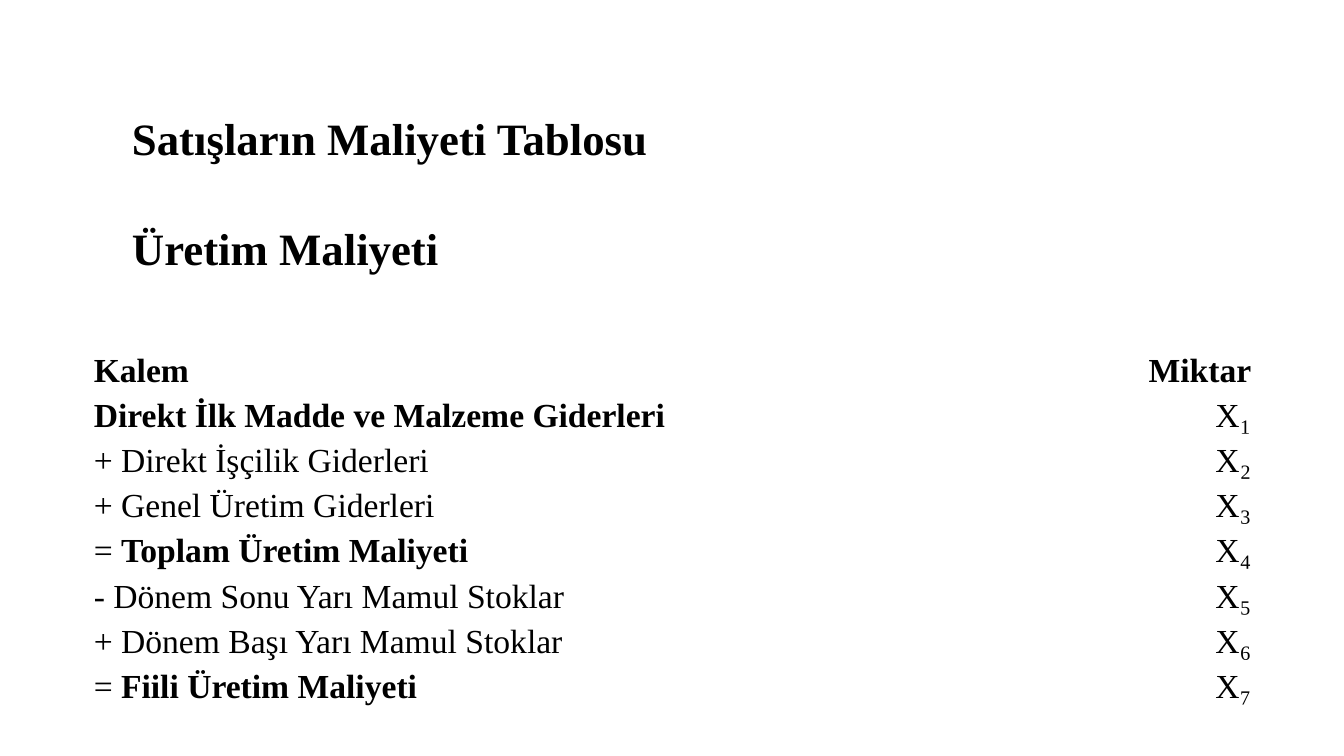
from pptx import Presentation
from pptx.dml.color import RGBColor
from pptx.enum.text import MSO_ANCHOR, PP_ALIGN
from pptx.util import Inches, Pt

BLACK = RGBColor(0, 0, 0)
FONT = "Times New Roman"
HEADINGS = ["Satışların Maliyeti Tablosu", "Üretim Maliyeti"]
COST_ROWS = [
    ("", "Kalem", "Miktar"),
    ("", "Direkt İlk Madde ve Malzeme Giderleri", "X₁"),
    ("+ Direkt İşçilik Giderleri", "", "X₂"),
    ("+ Genel Üretim Giderleri", "", "X₃"),
    ("= ", "Toplam Üretim Maliyeti", "X₄"),
    ("- Dönem Sonu Yarı Mamul Stoklar", "", "X₅"),
    ("+ Dönem Başı Yarı Mamul Stoklar", "", "X₆"),
    ("= ", "Fiili Üretim Maliyeti", "X₇"),
]


def add_run(paragraph, text, size, bold):
    run = paragraph.add_run()
    run.text = text
    run.font.name = FONT
    run.font.size = Pt(size)
    run.font.bold = bold
    run.font.color.rgb = BLACK


def start_cell(cell, alignment):
    cell.fill.background()
    cell.vertical_anchor = MSO_ANCHOR.MIDDLE
    cell.margin_left = cell.margin_right = Inches(0.01)
    cell.margin_top = cell.margin_bottom = Inches(0.01)
    paragraph = cell.text_frame.paragraphs[0]
    paragraph.alignment = alignment
    paragraph.line_spacing = 1.07
    return paragraph


presentation = Presentation()
presentation.slide_width = Inches(13.33)
presentation.slide_height = Inches(7.5)
slide = presentation.slides.add_slide(presentation.slide_layouts[6])

heading_box = slide.shapes.add_textbox(Inches(1.21), Inches(1.02), Inches(11.38), Inches(1.72))
heading_frame = heading_box.text_frame
heading_frame.word_wrap = True
heading_frame.add_paragraph()
for paragraph, heading in zip(heading_frame.paragraphs, HEADINGS):
    paragraph.line_spacing = 1.05
    add_run(paragraph, heading, 32, True)
heading_frame.paragraphs[1].space_before = Pt(38.6)

table_height = Inches(3.59)
table = slide.shapes.add_table(
    len(COST_ROWS), 2, Inches(0.92), Inches(3.44), Inches(11.5), table_height
).table
table.first_row = False
table.horz_banding = False
table.columns[0].width = Inches(8.4)
table.columns[1].width = Inches(3.1)

for index, (plain, strong, amount) in enumerate(COST_ROWS):
    table.rows[index].height = table_height // len(COST_ROWS)
    item_paragraph = start_cell(table.cell(index, 0), PP_ALIGN.JUSTIFY)
    for text, bold in ((plain, False), (strong, True)):
        if text:
            add_run(item_paragraph, text, 24, bold)
    amount_paragraph = start_cell(table.cell(index, 1), PP_ALIGN.RIGHT)
    add_run(amount_paragraph, amount, 24, index == 0)

table_style = table._tbl.tblPr.find("{http://schemas.openxmlformats.org/drawingml/2006/main}tableStyleId")
table_style.text = "{2D5ABB26-0587-4C30-8999-92F81FD0307C}"

presentation.save("out.pptx")
